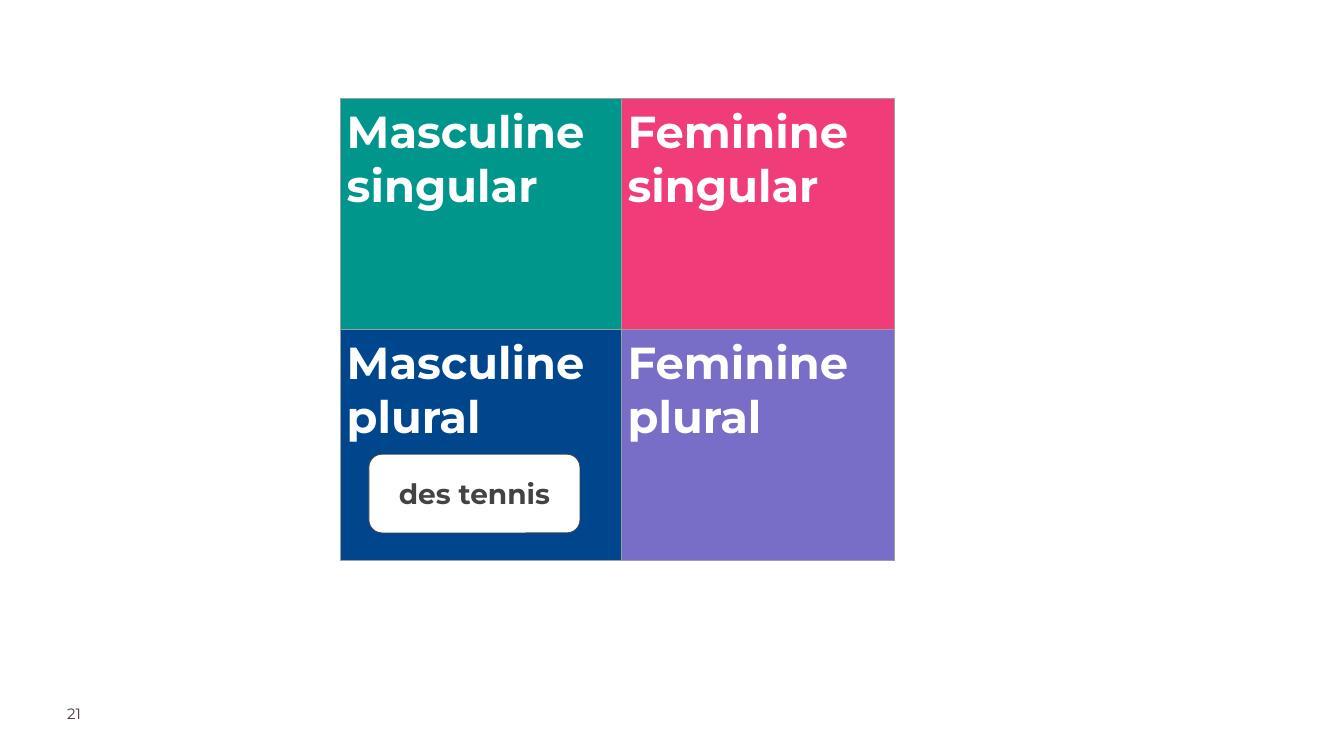
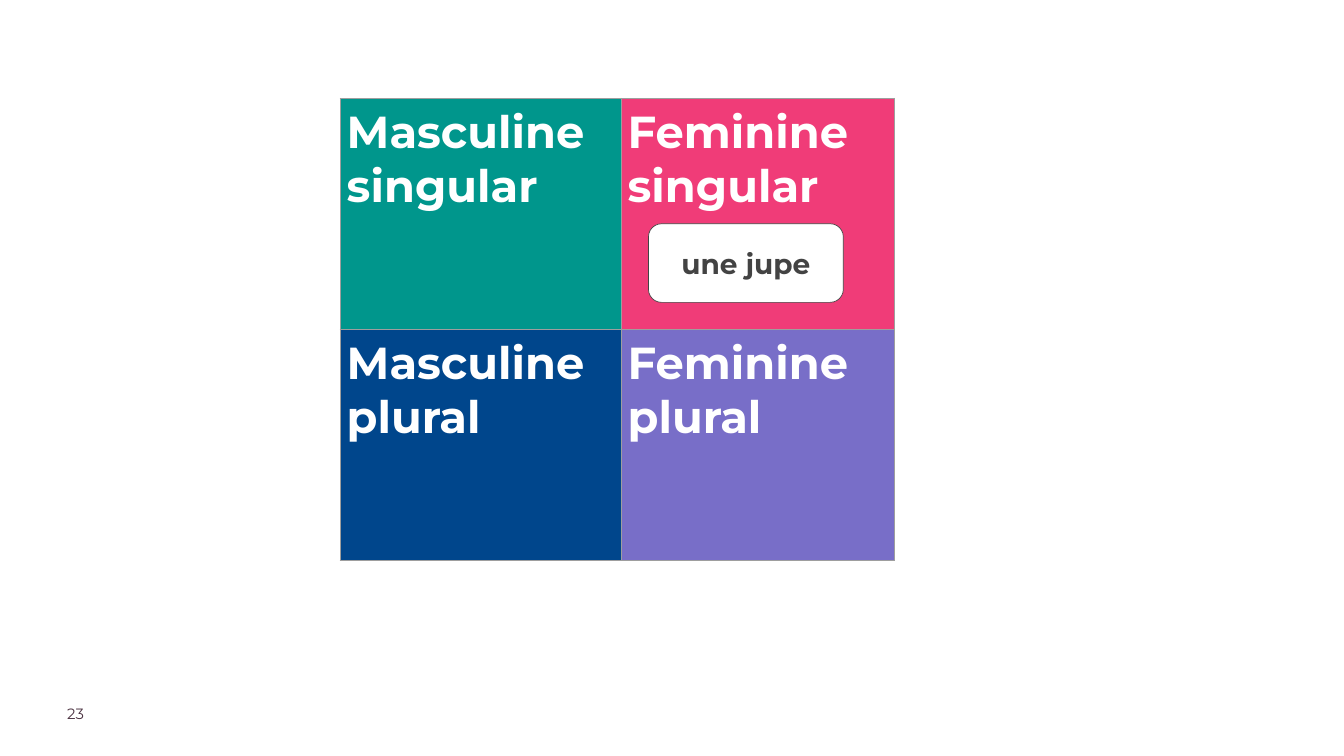
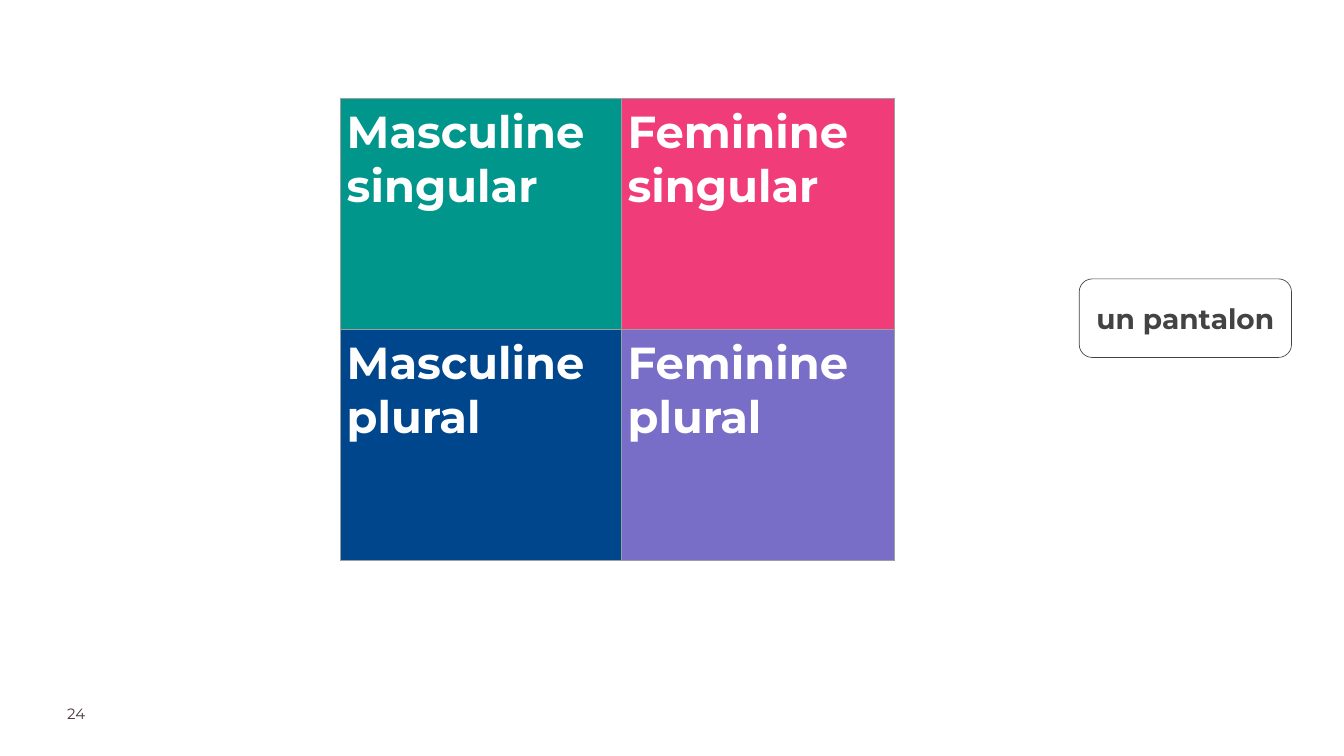
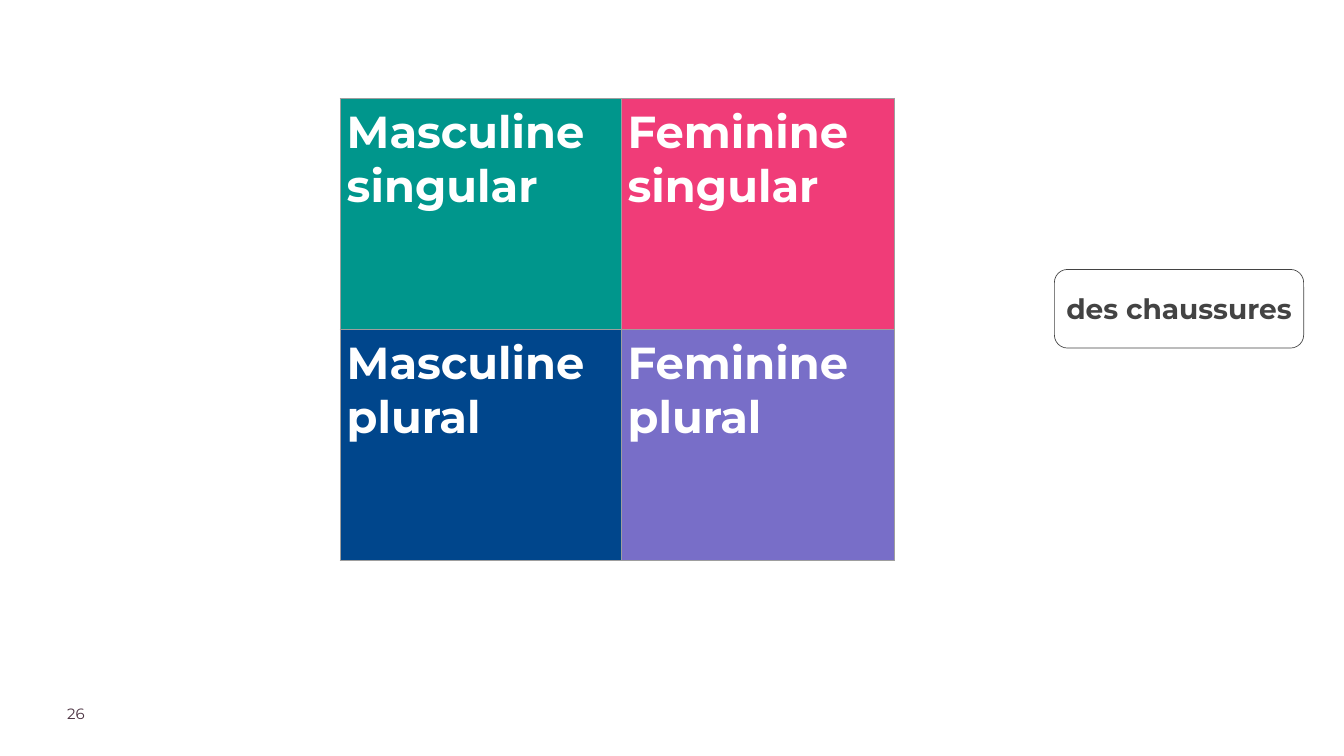
from dataclasses import dataclass

import pptx
import pptx.dml.color
import pptx.enum.shapes
import pptx.enum.text
import pptx.oxml
import pptx.oxml.ns
import pptx.util
from pptx.util import Inches


@dataclass(frozen=True)
class Theme:
    font: str = "Montserrat"
    white: str = "FFFFFF"
    page_ink: str = "4B3241"
    card_ink: str = "434343"
    grid_line: str = "9E9E9E"
    page_size: int = 16
    card_size: int = 30
    heading_size: int = 48
    line_width: float = 0.75


THEME = Theme()

CATEGORIES = [
    [("Masculine", "singular", "00968C"), ("Feminine", "singular", "F03C78")],
    [("Masculine", "plural", "00468C"), ("Feminine", "plural", "786EC8")],
]
COLUMN_WIDTHS = [4.18, 4.07]
ROW_HEIGHT = 3.44

# page number, word, then the card's left, top and width
CARDS = [
    (21, "des tennis", 5.49, 6.76, 3.14),
    (23, "une jupe", 9.65, 3.33, 2.9),
    (24, "un pantalon", 16.06, 4.15, 3.16),
    (26, "des chaussures", 15.69, 4.01, 3.71),
]


def rgb(value):
    return pptx.dml.color.RGBColor.from_string(value)


class Deck:
    def __init__(self, theme):
        self.theme = theme
        self.presentation = pptx.Presentation()
        self.presentation.slide_width = Inches(20)
        self.presentation.slide_height = Inches(11.25)
        self.slide = None

    def add_slide(self):
        blank = self.presentation.slide_layouts[6]
        self.slide = self.presentation.slides.add_slide(blank)

    def set_text(self, frame, text, size, color, bold=False, align=None, margin=0.1):
        """Fill a text frame, one paragraph for each line of text."""
        frame.word_wrap = True
        frame.margin_left = frame.margin_right = Inches(margin)
        frame.margin_top = frame.margin_bottom = Inches(margin)
        frame.text = text
        for paragraph in frame.paragraphs:
            paragraph.alignment = align
            paragraph.font.name = self.theme.font
            paragraph.font.size = pptx.util.Pt(size)
            paragraph.font.bold = bold
            paragraph.font.color.rgb = rgb(color)

    def page_number(self, number):
        box = self.slide.shapes.add_textbox(
            Inches(1), Inches(10.48), Inches(1.57), Inches(0.39))
        self.set_text(box.text_frame, str(number), self.theme.page_size,
                      self.theme.page_ink, margin=0)

    def border(self, cell):
        """Outline all four sides of a cell."""
        properties = cell._tc.get_or_add_tcPr()
        width = pptx.util.Pt(self.theme.line_width)
        for side in ("lnL", "lnR", "lnT", "lnB"):
            properties.append(pptx.oxml.parse_xml(
                f'<a:{side} {pptx.oxml.ns.nsdecls("a")} w="{width}"><a:solidFill>'
                f'<a:srgbClr val="{self.theme.grid_line}"/></a:solidFill></a:{side}>'))

    def category_grid(self):
        grid = self.slide.shapes.add_table(
            len(CATEGORIES), len(COLUMN_WIDTHS), Inches(5.06), Inches(1.46),
            Inches(sum(COLUMN_WIDTHS)), Inches(ROW_HEIGHT * len(CATEGORIES))).table
        grid.first_row = grid.horz_banding = False
        for column, width in zip(grid.columns, COLUMN_WIDTHS):
            column.width = Inches(width)
        for row, categories in zip(grid.rows, CATEGORIES):
            row.height = Inches(ROW_HEIGHT)
            for cell, (gender, number, color) in zip(row.cells, categories):
                self.border(cell)
                cell.fill.solid()
                cell.fill.fore_color.rgb = rgb(color)
                cell.margin_left = cell.margin_right = Inches(0.1)
                cell.margin_top = cell.margin_bottom = Inches(0.1)
                self.set_text(cell.text_frame, f"{gender}\n{number}",
                              self.theme.heading_size, self.theme.white, bold=True)

    def word_card(self, word, left, top, width):
        card = self.slide.shapes.add_shape(
            pptx.enum.shapes.MSO_SHAPE.ROUNDED_RECTANGLE,
            Inches(left), Inches(top), Inches(width), Inches(1.17))
        card.shadow.inherit = False
        card.fill.solid()
        card.fill.fore_color.rgb = rgb(self.theme.white)
        card.line.color.rgb = rgb(self.theme.card_ink)
        card.line.width = pptx.util.Pt(self.theme.line_width)
        card.text_frame.vertical_anchor = pptx.enum.text.MSO_ANCHOR.MIDDLE
        self.set_text(card.text_frame, word, self.theme.card_size,
                      self.theme.card_ink, bold=True,
                      align=pptx.enum.text.PP_ALIGN.CENTER)


def main():
    deck = Deck(THEME)
    for number, word, left, top, width in CARDS:
        deck.add_slide()
        deck.page_number(number)
        deck.category_grid()
        deck.word_card(word, left, top, width)
    deck.presentation.save("out.pptx")


if __name__ == "__main__":
    main()
